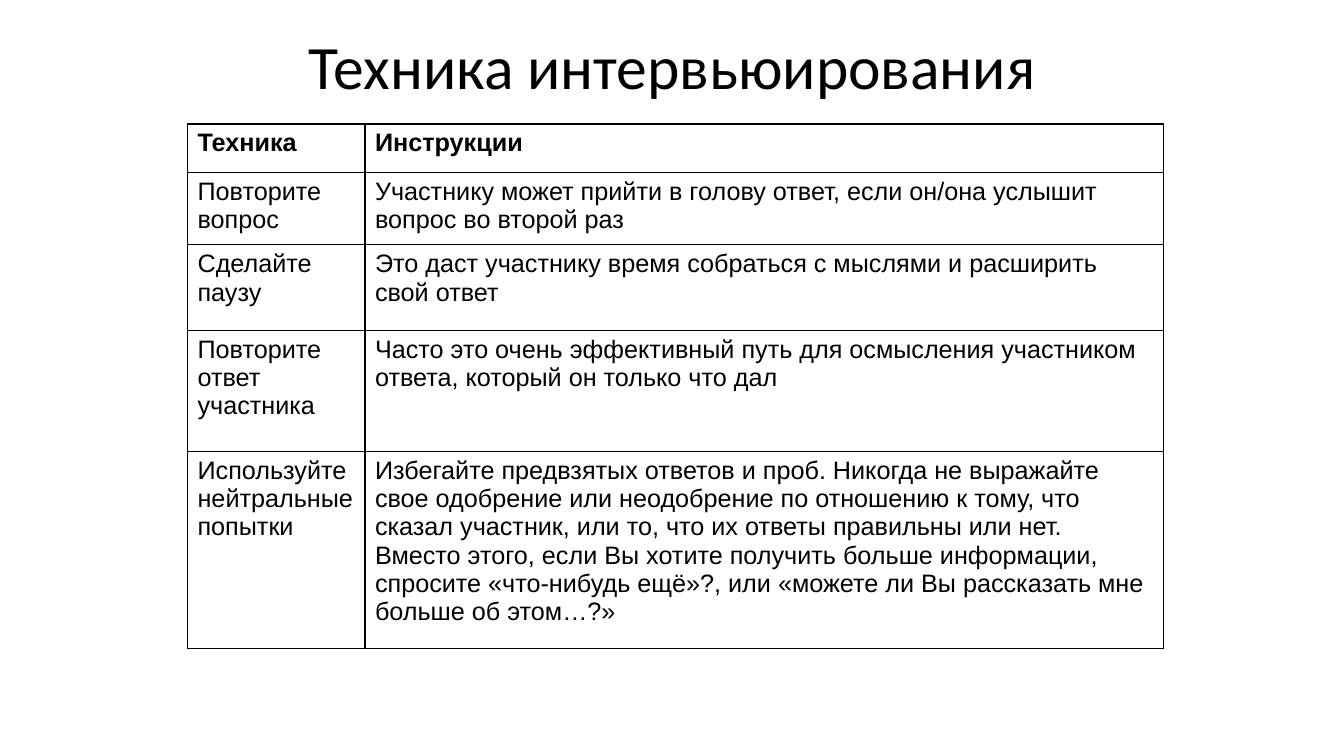
import lxml.etree
import pptx
import pptx.dml.color
import pptx.enum.text
import pptx.oxml.ns
import pptx.util

Inches = pptx.util.Inches
COLORS = {"ink": "000000", "paper": "FFFFFF"}
INSETS = {
    "margin_left": Inches(0.1),
    "margin_right": Inches(0.1),
    "margin_top": Inches(0.05),
    "margin_bottom": Inches(0.05),
}
TITLE = "Техника интервьюирования"
COLUMN_WIDTHS = [1.76, 7.92]
ROW_HEIGHTS = [0.48, 0.72, 0.85, 1.2, 1.95]
TECHNIQUES = [
    ("Техника", "Инструкции"),
    (
        "Повторите вопрос",
        "Участнику может прийти в голову ответ, если он/она услышит вопрос во второй раз",
    ),
    (
        "Сделайте паузу",
        "Это даст участнику время собраться с мыслями и расширить свой ответ",
    ),
    (
        "Повторите ответ участника",
        "Часто это очень эффективный путь для осмысления участником ответа, "
        "который он только что дал",
    ),
    (
        "Используйте нейтральные попытки",
        "Избегайте предвзятых ответов и проб. Никогда не выражайте свое одобрение "
        "или неодобрение по отношению к тому, что сказал участник, или то, что их "
        "ответы правильны или нет. Вместо этого, если Вы хотите получить больше "
        "информации, спросите «что-нибудь ещё»?, или «можете ли Вы рассказать мне "
        "больше об этом…?»",
    ),
]


def color(name):
    return pptx.dml.color.RGBColor.from_string(COLORS[name])


def apply_format(target, values):
    for name, value in values.items():
        setattr(target, name, value)


def write_text(para, text, font):
    span = para.add_run()
    span.text = text
    apply_format(span.font, font)
    span.font.color.rgb = color("ink")


def add_borders(cell):
    properties = cell._tc.get_or_add_tcPr()
    tag = pptx.oxml.ns.qn
    for side in ("a:lnL", "a:lnR", "a:lnT", "a:lnB"):
        line = lxml.etree.SubElement(properties, tag(side), w=str(pptx.util.Pt(1)))
        fill = lxml.etree.SubElement(line, tag("a:solidFill"))
        lxml.etree.SubElement(fill, tag("a:srgbClr"), val=COLORS["ink"])


def add_title(page, left, top, width, height):
    box = page.shapes.add_textbox(
        Inches(left), Inches(top), Inches(width), Inches(height)
    )
    frame = box.text_frame
    apply_format(frame, INSETS)
    frame.word_wrap = True
    frame.vertical_anchor = pptx.enum.text.MSO_ANCHOR.MIDDLE
    para = frame.paragraphs[0]
    para.alignment = pptx.enum.text.PP_ALIGN.CENTER
    write_text(para, TITLE, {"name": "Calibri", "size": pptx.util.Pt(44)})


def add_techniques(page, left, top, width, height):
    table = page.shapes.add_table(
        len(ROW_HEIGHTS), len(COLUMN_WIDTHS),
        Inches(left), Inches(top), Inches(width), Inches(height),
    ).table
    apply_format(table, {"first_row": False, "horz_banding": False})
    for column, share in zip(table.columns, COLUMN_WIDTHS):
        column.width = Inches(width * share / sum(COLUMN_WIDTHS))
    for row, share in zip(table.rows, ROW_HEIGHTS):
        row.height = Inches(height * share / sum(ROW_HEIGHTS))
    for row_index, texts in enumerate(TECHNIQUES):
        font = {"name": "Arial", "size": pptx.util.Pt(18), "bold": row_index == 0}
        for column_index, text in enumerate(texts):
            cell = table.cell(row_index, column_index)
            apply_format(cell, INSETS)
            add_borders(cell)
            cell.fill.solid()
            cell.fill.fore_color.rgb = color("paper")
            write_text(cell.text_frame.paragraphs[0], text, font)


def main():
    deck = pptx.Presentation()
    apply_format(
        deck, {"slide_width": Inches(13.33), "slide_height": Inches(7.5)}
    )
    page = deck.slides.add_slide(deck.slide_layouts[6])
    add_title(page, 1.67, 0.13, 10, 1.02)
    add_techniques(page, 1.86, 1.23, 9.68, 5.2)
    deck.save("out.pptx")


if __name__ == "__main__":
    main()
